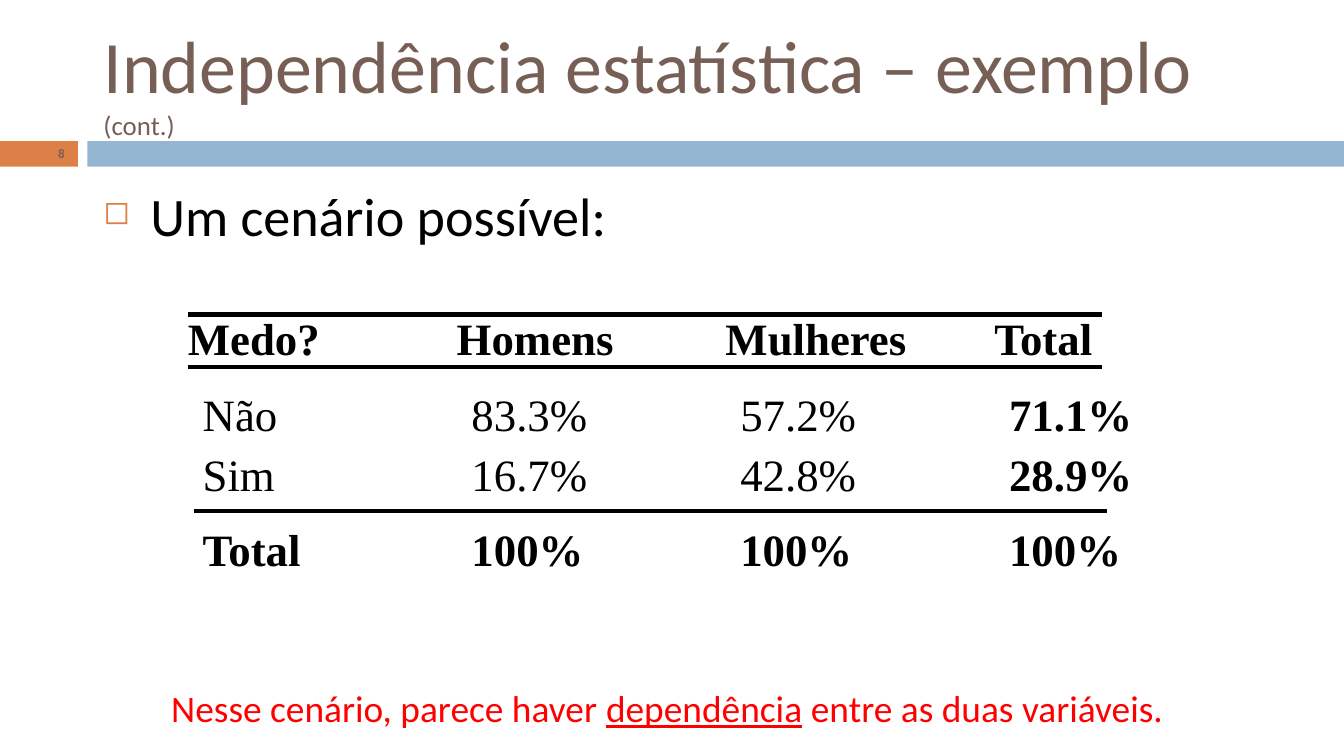
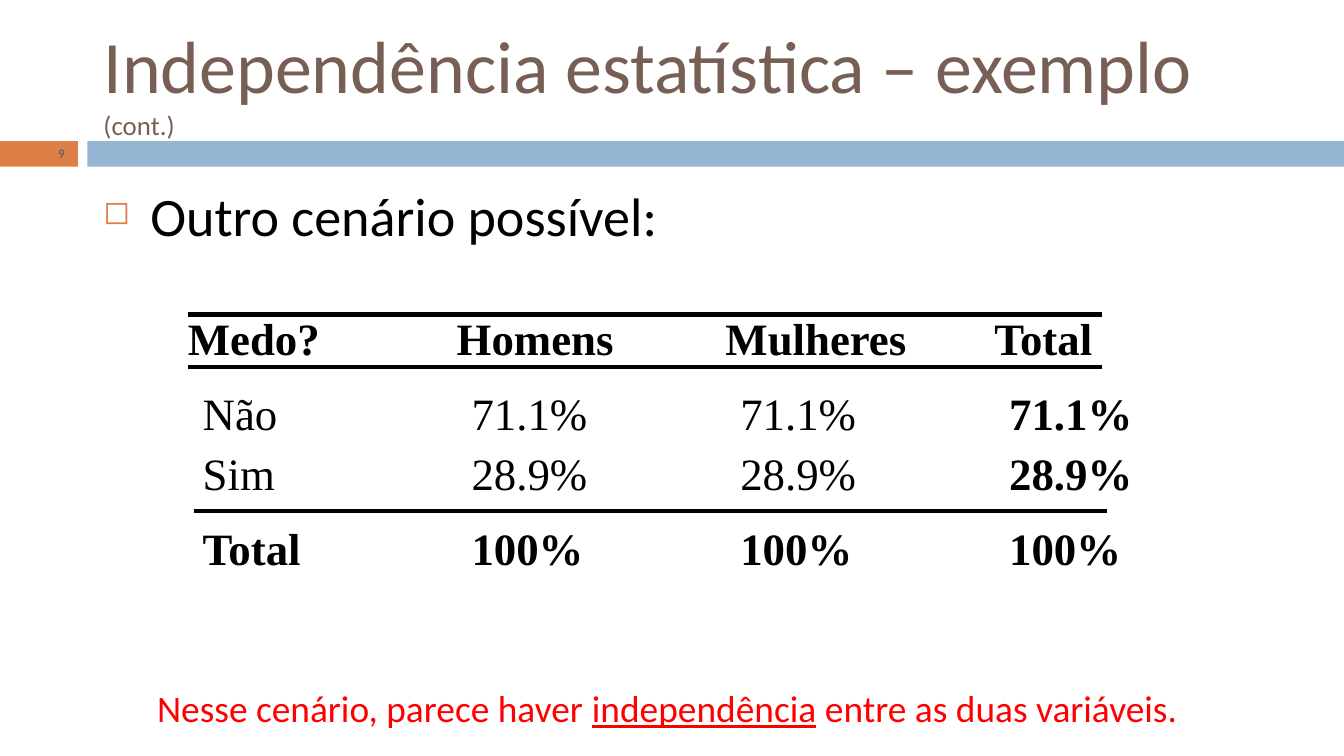
from lxml import etree
from pptx import Presentation
from pptx import util as u
from pptx.dml.color import RGBColor
from pptx.enum import shapes, text
from pptx.oxml.ns import qn

# Content
TITLE = ("Independência estatística – exemplo ", "(cont.)")
HEADINGS = ("Medo?", "Homens", "Mulheres", "Total")
SCENARIOS = [
    {
        "number": 8,
        "lead": "Um cenário possível:",
        "rows": [("Não", "83.3%", "57.2%", "71.1%"),
                 ("Sim", "16.7%", "42.8%", "28.9%")],
        "rows_box": (1.41, 2.94, 7.53, 1.47),
        "finding": "dependência",
    },
    {
        "number": 9,
        "lead": "Outro cenário possível:",
        "rows": [("Não", "71.1%", "71.1%", "71.1%"),
                 ("Sim", "28.9%", "28.9%", "28.9%")],
        "rows_box": (1.41, 2.93, 7.19, 1.47),
        "finding": "independência",
    },
]
TOTALS = ("Total", "100%", "100%", "100%")
CONCLUSION = ("Nesse cenário, parece haver ", " entre as duas variáveis.")

# Shared look
BROWN = RGBColor(0x77, 0x5F, 0x55)
ORANGE = RGBColor(0xDD, 0x80, 0x47)
BLUE = RGBColor(0x94, 0xB6, 0xD2)
BLACK = RGBColor(0, 0, 0)
RED = RGBColor(0xFF, 0, 0)
SANS, SERIF = "Calibri", "Times New Roman"

WIDTH = 10
HEIGHT = WIDTH * 9 / 16
MARGIN, CONTENT_WIDTH = 0.67, 8.92
BAND_TOP, BAND_HEIGHT = 1.05, 0.19
NUMBER_WIDTH, BAND_LEFT = 0.58, 0.65
COLUMN = 2
RULE_LENGTH = 6.8
RULES = [(1.4, 2.34), (1.4, 2.73), (1.44, 3.8)]


def inches(*lengths):
    return [u.Inches(length) for length in lengths]


def style(font, name, size, color, bold=None):
    font.name, font.size, font.bold = name, u.Pt(size), bold
    font.color.rgb = color


def add_text(slide, *box, grow=False):
    frame = slide.shapes.add_textbox(*inches(*box)).text_frame
    frame.word_wrap = True
    frame.auto_size = (text.MSO_AUTO_SIZE.SHAPE_TO_FIT_TEXT if grow
                       else text.MSO_AUTO_SIZE.NONE)
    return frame


def add_run(paragraph, words):
    run = paragraph.add_run()
    run.text = words
    return run


def add_band(slide, left, width, color):
    band = slide.shapes.add_shape(
        shapes.MSO_SHAPE.RECTANGLE,
        *inches(left, BAND_TOP, width, BAND_HEIGHT))
    band.shadow.inherit = False
    band.fill.solid()
    band.fill.fore_color.rgb = color
    band.line.fill.background()


def add_rule(slide, left, top):
    rule = slide.shapes.add_connector(
        shapes.MSO_CONNECTOR.STRAIGHT,
        *inches(left, top, left + RULE_LENGTH, top))
    rule.line.color.rgb = BLACK
    rule.line.width = u.Pt(2.25)
    etree.SubElement(rule._element.spPr, qn("a:effectLst"))


def set_columns(paragraph):
    """Tab stops at the table's column edges."""
    stops = etree.SubElement(paragraph._p.get_or_add_pPr(), qn("a:tabLst"))
    for column in range(1, len(HEADINGS)):
        etree.SubElement(stops, qn("a:tab"),
                         pos=str(u.Inches(column * COLUMN)), algn="l")
    paragraph.space_before = u.Pt(12)


def set_bullet(paragraph):
    props = paragraph._p.get_or_add_pPr()
    props.set("marL", str(u.Inches(0.35)))
    props.set("indent", str(-u.Inches(0.35)))
    color = etree.SubElement(props, qn("a:buClr"))
    etree.SubElement(color, qn("a:srgbClr"), val=str(ORANGE))
    etree.SubElement(props, qn("a:buSzPct"), val="60000")
    etree.SubElement(props, qn("a:buChar"), char="◻")


def add_frame(slide, number):
    """Title, bands and slide number."""
    add_band(slide, 0, NUMBER_WIDTH, ORANGE)
    add_band(slide, BAND_LEFT, WIDTH - BAND_LEFT, BLUE)

    title = slide.shapes.title
    title.left, title.top, title.width, title.height = inches(
        MARGIN, 0.19, CONTENT_WIDTH, 0.81)
    frame = title.text_frame
    frame.word_wrap = True
    frame.auto_size = text.MSO_AUTO_SIZE.NONE
    frame.vertical_anchor = text.MSO_ANCHOR.MIDDLE
    frame.margin_right = u.Inches(0.2)
    heading = frame.paragraphs[0]
    heading.alignment = text.PP_ALIGN.LEFT
    for words, size in zip(TITLE, (39.6, 14.4)):
        style(add_run(heading, words).font, SANS, size, BROWN)

    frame = add_text(slide, 0, 1.04, NUMBER_WIDTH, 0.2)
    frame.vertical_anchor = text.MSO_ANCHOR.MIDDLE
    page = frame.paragraphs[0]
    page.text = str(number)
    page.alignment = text.PP_ALIGN.RIGHT
    style(page.font, SANS, 7, BROWN, True)


def add_lead(slide, words):
    lead = add_text(slide, MARGIN, 1.31, CONTENT_WIDTH, 3.69).paragraphs[0]
    set_bullet(lead)
    lead.text = words
    lead.space_before = u.Pt(7)
    style(lead.font, SANS, 29, BLACK)


def add_percentages(slide, rows, box):
    """Ruled, tabbed percentages: headings, answers and totals."""
    body = add_text(slide, *box, grow=True)
    for index, (*cells, total) in enumerate(rows):
        row = body.add_paragraph() if index else body.paragraphs[0]
        set_columns(row)
        row.line_spacing = 0.7
        style(row.font, SERIF, 24, BLACK)
        add_run(row, "\t".join(cells) + "\t")
        add_run(row, total).font.bold = True
    totals = body.add_paragraph()
    header = add_text(slide, 1.3, 2.26, 7.5, 0.5, grow=True).paragraphs[0]
    for row, cells in ((totals, TOTALS), (header, HEADINGS)):
        set_columns(row)
        row.text = "\t".join(cells)
        style(row.font, SERIF, 24, BLACK, True)
    for left, top in RULES:
        add_rule(slide, left, top)


def add_conclusion(slide, finding):
    conclusion = add_text(slide, 0.75, 5.05, 8.43, 0.44,
                          grow=True).paragraphs[0]
    conclusion.alignment = text.PP_ALIGN.CENTER
    style(conclusion.font, SANS, 20, RED)
    before, after = CONCLUSION
    add_run(conclusion, before)
    add_run(conclusion, finding).font.underline = True
    add_run(conclusion, after)


def main():
    deck = Presentation()
    deck.slide_width, deck.slide_height = inches(WIDTH, HEIGHT)
    title_only = deck.slide_layouts[5]
    for scenario in SCENARIOS:
        slide = deck.slides.add_slide(title_only)
        add_frame(slide, scenario["number"])
        add_lead(slide, scenario["lead"])
        add_percentages(slide, scenario["rows"], scenario["rows_box"])
        add_conclusion(slide, scenario["finding"])
    deck.save("out.pptx")


if __name__ == "__main__":
    main()
